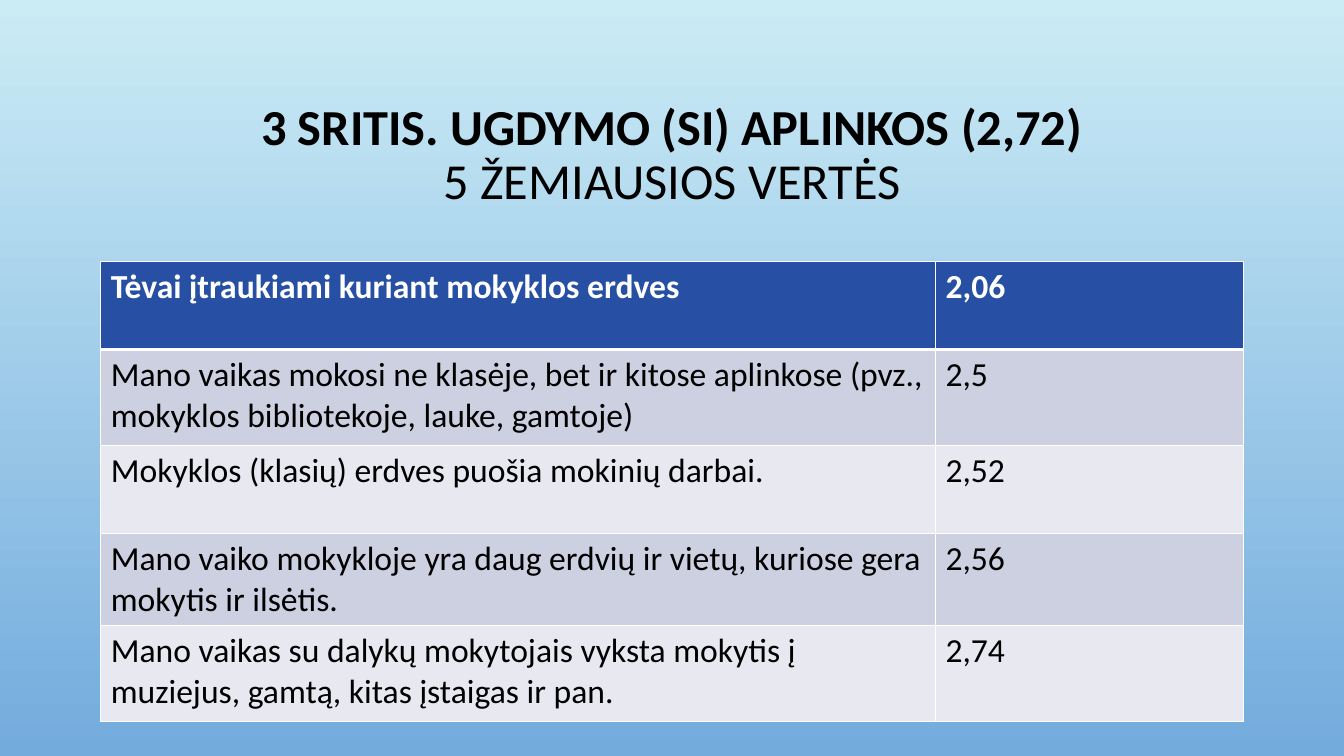
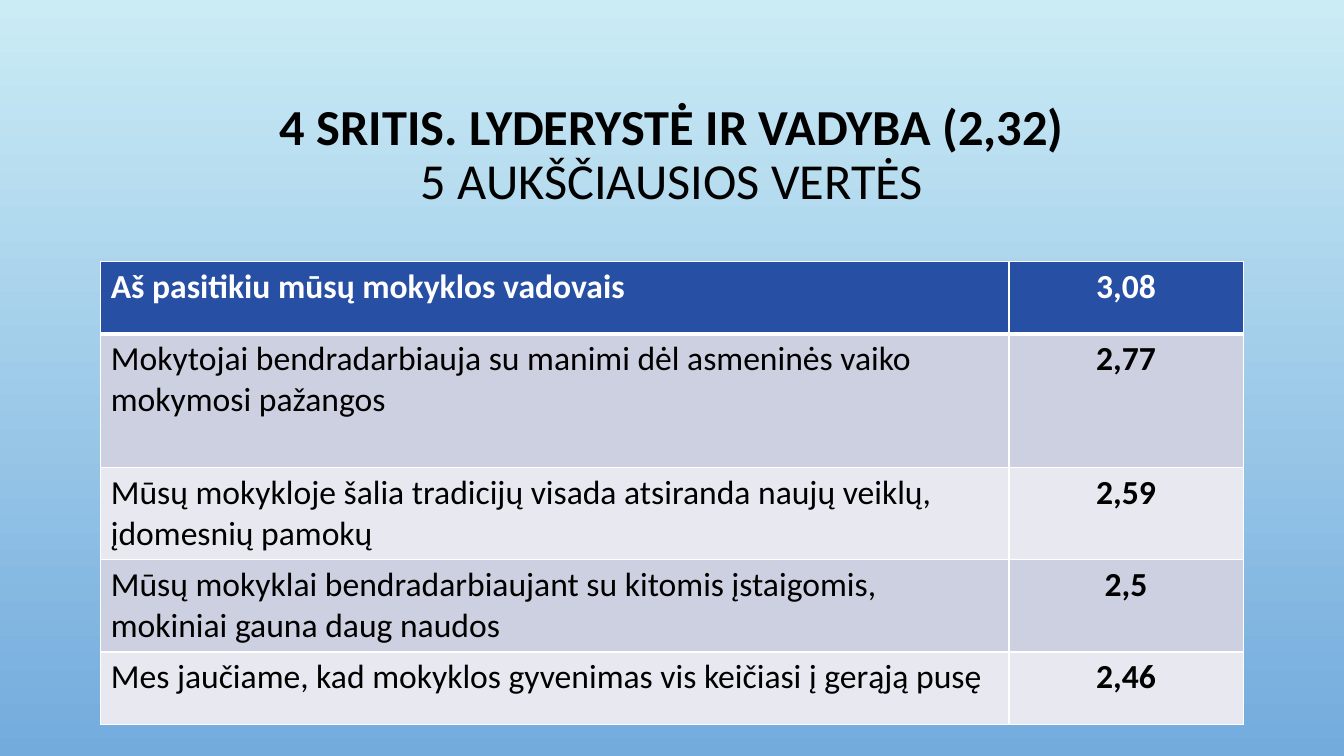
from lxml import etree
from pptx import Presentation
from pptx.dml.color import RGBColor
from pptx.enum.text import MSO_ANCHOR, MSO_AUTO_SIZE, PP_ALIGN
from pptx.oxml.ns import qn
from pptx.util import Pt

PX = 9525  # EMU per pixel, 96 pixels to the inch
CENTER, LEFT = PP_ALIGN.CENTER, PP_ALIGN.LEFT
MIDDLE = MSO_ANCHOR.MIDDLE
NO_AUTOFIT = MSO_AUTO_SIZE.NONE
TITLE_ONLY = 5
FONT = "Calibri"
COLORS = {
    "sky_top": "CBECF5",
    "sky_bottom": "73ABDD",
    "header": "274FA4",
    "band_dark": "CDD0E0",
    "band_light": "E8E9F0",
    "white": "FFFFFF",
    "black": "000000",
}

SLIDES = [
    {
        "title": "3 SRITIS. UGDYMO (SI) APLINKOS (2,72)",
        "subtitle": "5 ŽEMIAUSIOS VERTĖS",
        "column_widths": [795, 293],
        "row_heights": [84, 91, 84, 88, 91],
        "value_align": LEFT,
        "bold_values": False,
        "rows": [
            ("Tėvai įtraukiami kuriant mokyklos erdves", "2,06"),
            ("Mano vaikas mokosi ne klasėje, bet ir kitose aplinkose (pvz., "
             "mokyklos bibliotekoje, lauke, gamtoje)", "2,5"),
            ("Mokyklos (klasių) erdves puošia mokinių darbai.", "2,52"),
            ("Mano vaiko mokykloje yra daug erdvių ir vietų, kuriose gera "
             "mokytis ir ilsėtis.", "2,56"),
            ("Mano vaikas su dalykų mokytojais vyksta mokytis į muziejus, "
             "gamtą, kitas įstaigas ir pan.", "2,74"),
        ],
    },
    {
        "title": "4 SRITIS. LYDERYSTĖ IR VADYBA (2,32)",
        "subtitle": "5 AUKŠČIAUSIOS VERTĖS",
        "column_widths": [865, 223],
        "row_heights": [69, 127, 88, 88, 69],
        "value_align": CENTER,
        "bold_values": True,
        "rows": [
            ("Aš pasitikiu mūsų mokyklos vadovais", "3,08"),
            ("Mokytojai bendradarbiauja su manimi dėl asmeninės vaiko "
             "mokymosi pažangos", "2,77"),
            ("Mūsų mokykloje šalia tradicijų visada atsiranda naujų veiklų, "
             "įdomesnių pamokų", "2,59"),
            ("Mūsų mokyklai bendradarbiaujant su kitomis įstaigomis, "
             "mokiniai gauna daug naudos", "2,5"),
            ("Mes jaučiame, kad mokyklos gyvenimas vis keičiasi į gerąją pusę",
             "2,46"),
        ],
    },
]


def add_run(paragraph, text, size, color, bold):
    run = paragraph.add_run()
    run.text = text
    run.font.name = FONT
    run.font.size = Pt(size)
    run.font.bold = bold
    run.font.color.rgb = RGBColor.from_string(COLORS[color])


def add_borders(cell, top, bottom):
    """Draw white cell borders, 1 pt at the sides; must precede the cell's fill."""
    properties = cell._tc.get_or_add_tcPr()
    for tag, width in (("lnL", 1), ("lnR", 1), ("lnT", top), ("lnB", bottom)):
        line = etree.SubElement(properties, qn(f"a:{tag}"), w=str(Pt(width)))
        fill = etree.SubElement(line, qn("a:solidFill"))
        etree.SubElement(fill, qn("a:srgbClr"), val=COLORS["white"])


presentation = Presentation()
presentation.slide_width = 1280 * PX
presentation.slide_height = 720 * PX

background = presentation.slide_master.background.fill
background.gradient()
background.gradient_angle = 270
for stop, color in zip(background.gradient_stops, ("sky_top", "sky_bottom")):
    stop.color.rgb = RGBColor.from_string(COLORS[color])
background.gradient_stops[0].position = 0
background.gradient_stops[1].position = 1

for content in SLIDES:
    slide = presentation.slides.add_slide(presentation.slide_layouts[TITLE_ONLY])

    title = slide.shapes.title
    title.left, title.top = 96 * PX, 65 * PX
    title.width, title.height = 1088 * PX, 168 * PX
    title.text_frame.vertical_anchor = MIDDLE
    title.text_frame.word_wrap = True
    title.text_frame.auto_size = NO_AUTOFIT
    paragraph = title.text_frame.paragraphs[0]
    paragraph.alignment = CENTER
    paragraph.line_spacing = 0.9
    add_run(paragraph, content["title"], 36, "black", True)
    paragraph.add_line_break()
    add_run(paragraph, content["subtitle"], 36, "black", False)

    rows, heights = content["rows"], content["row_heights"]
    table = slide.shapes.add_table(
        len(rows), 2, 96 * PX, 249 * PX, 1088 * PX, sum(heights) * PX).table
    for column, width in zip(table.columns, content["column_widths"]):
        column.width = width * PX
    for row, height in zip(table.rows, heights):
        row.height = height * PX

    for row_index, texts in enumerate(rows):
        is_header = row_index == 0
        if is_header:
            fill_color = "header"
        else:
            fill_color = "band_dark" if row_index % 2 else "band_light"
        for column_index, text in enumerate(texts):
            is_value = column_index == 1
            cell = table.cell(row_index, column_index)
            add_borders(cell, top=3 if row_index == 1 else 1,
                        bottom=3 if is_header else 1)
            cell.fill.solid()
            cell.fill.fore_color.rgb = RGBColor.from_string(COLORS[fill_color])
            paragraph = cell.text_frame.paragraphs[0]
            paragraph.alignment = content["value_align"] if is_value else LEFT
            add_run(paragraph, text, 24, "white" if is_header else "black",
                    is_header or (is_value and content["bold_values"]))

presentation.save("out.pptx")
